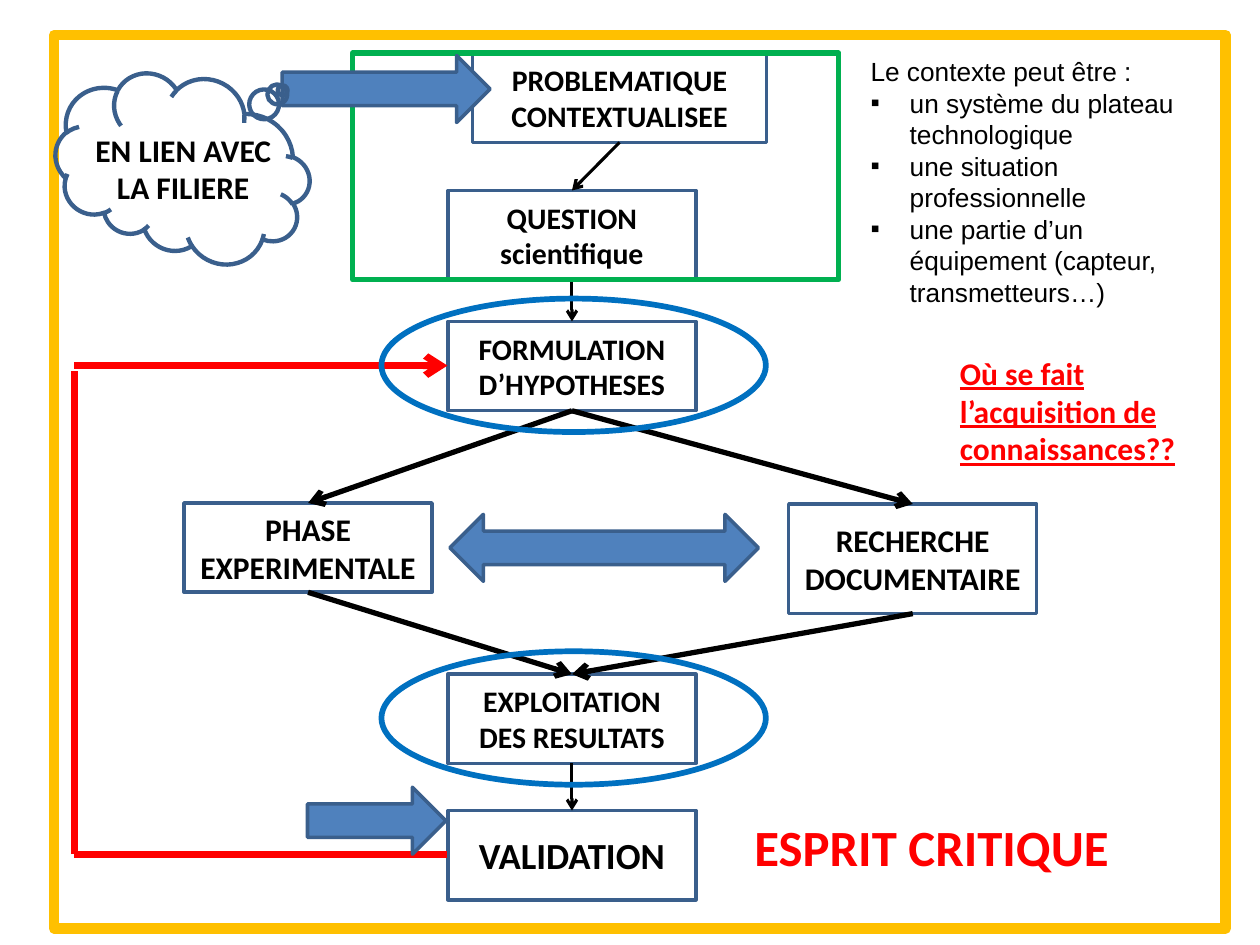
from dataclasses import dataclass

from lxml.etree import SubElement
from pptx import Presentation
from pptx.dml.color import RGBColor
from pptx.enum.shapes import MSO_CONNECTOR, MSO_SHAPE
from pptx.enum.text import MSO_ANCHOR, PP_ALIGN
from pptx.oxml.ns import qn
from pptx.util import Cm, Pt


@dataclass(frozen=True)
class Theme:
    """Colours, fonts and type sizes of the slide."""
    black: str = "000000"
    white: str = "FFFFFF"
    red: str = "FF0000"
    gold: str = "FFC000"
    green: str = "00B050"
    ring: str = "0070C0"
    blue: str = "4F81BD"
    outline: str = "3A5F8C"
    heading_font: str = "Calibri"
    body_font: str = "Arial"
    body: int = 15
    step: int = 17
    label: int = 18
    result: int = 21
    slogan: int = 29


THEME = Theme()


def write_text(shape, lines, size=THEME.label, font=THEME.heading_font, color=THEME.black,
               bold=True, underline=False, align=PP_ALIGN.LEFT, anchor=MSO_ANCHOR.TOP, bullets_from=None):
    """Write one paragraph per line, with bullets from the given index on."""
    frame = shape.text_frame
    frame.word_wrap = True
    frame.vertical_anchor = anchor
    for index, line in enumerate(lines):
        paragraph = frame.paragraphs[0] if index == 0 else frame.add_paragraph()
        paragraph.alignment = align
        run = paragraph.add_run()
        run.text = line
        run.font.size = Pt(size)
        run.font.name = font
        run.font.bold = bold
        run.font.underline = underline
        run.font.color.rgb = RGBColor.from_string(color)
        if bullets_from is not None and index >= bullets_from:
            properties = paragraph._p.get_or_add_pPr()
            properties.set("marL", str(Cm(0.79)))
            properties.set("indent", str(-Cm(0.79)))
            SubElement(properties, qn("a:buFont"), typeface=font)
            SubElement(properties, qn("a:buChar"), char="▪")


def add_text(slide, box, lines, **text_format):
    """Add a text box in the given box."""
    shape = slide.shapes.add_textbox(*map(Cm, box))
    write_text(shape, lines, **text_format)


def add_figure(slide, kind, box, line=THEME.outline, width=2, fill=None):
    """Add an outlined preset shape, hollow unless a fill is given."""
    shape = slide.shapes.add_shape(kind, *map(Cm, box))
    shape.shadow.inherit = False
    shape.line.color.rgb = RGBColor.from_string(line)
    shape.line.width = Pt(width)
    if fill:
        shape.fill.solid()
        shape.fill.fore_color.rgb = RGBColor.from_string(fill)
    else:
        shape.fill.background()
    return shape


def add_line(slide, start=(0, 0), end=(0, 0), color=THEME.black, width=1.75, arrow=True):
    """Add a straight connector, with an open arrowhead if asked."""
    connector = slide.shapes.add_connector(MSO_CONNECTOR.STRAIGHT, *map(Cm, (*start, *end)))
    connector.line.color.rgb = RGBColor.from_string(color)
    connector.line.width = Pt(width)
    if arrow:
        SubElement(connector.line._get_or_add_ln(), qn("a:tailEnd"), type="arrow")
    SubElement(connector._element.spPr, qn("a:effectLst"))
    return connector


def draw_steps(slide, box):
    """Draw the steps of the inquiry and the arrows between them."""
    left, top, width, height = box
    step_width, step_height = 5, 1.8
    middle, right = 5.32, width - step_width
    steps = {
        "problem": (["PROBLEMATIQUE", "CONTEXTUALISEE"], 5.82, 0, 5.92, step_height, THEME.step),
        "question": (["QUESTION", "scientifique"], middle, 2.77, step_width, step_height, THEME.step),
        "hypotheses": (["FORMULATION D’HYPOTHESES"], middle, 5.41, step_width, step_height, THEME.step),
        "experiment": (["PHASE EXPERIMENTALE"], 0, 9.07, step_width, step_height, THEME.label),
        "research": (["RECHERCHE DOCUMENTAIRE"], right, 9.09, step_width, 2.21, THEME.label),
        "results": (["EXPLOITATION DES RESULTATS"], middle, 12.52, step_width, step_height, THEME.step),
        "validation": (["VALIDATION"], middle, height - step_height, step_width, step_height, THEME.result),
    }
    shapes = {}
    for name, (lines, x, y, shape_width, shape_height, size) in steps.items():
        shapes[name] = add_figure(slide, MSO_SHAPE.RECTANGLE, (left + x, top + y, shape_width, shape_height),
                                  fill=THEME.white)
        write_text(shapes[name], lines, size=size, align=PP_ALIGN.CENTER, anchor=MSO_ANCHOR.MIDDLE)
    links = [
        ("problem", "question", 1.75), ("question", "hypotheses", 1.75),
        ("hypotheses", "experiment", 3), ("hypotheses", "research", 3),
        ("experiment", "results", 3), ("research", "results", 3), ("results", "validation", 1.75),
    ]
    for source, target, line_width in links:
        connector = add_line(slide, width=line_width)
        connector.begin_connect(shapes[source], 2)
        connector.end_connect(shapes[target], 0)


def draw_feedback(slide, box):
    """Draw the red loop from validation back to the hypotheses."""
    left, top, width, height = box
    right, bottom = left + width, top + height
    add_line(slide, (right, bottom), (left, bottom), THEME.red, 4, arrow=False)
    add_line(slide, (left, bottom), (left, top + 0.1), THEME.red, 4, arrow=False)
    add_line(slide, (left, top), (right, top), THEME.red, 4)


def draw_outlines(slide, box):
    """Draw the gold frame, the green frame and the two blue rings."""
    left, top, width, height = box
    add_figure(slide, MSO_SHAPE.RECTANGLE, box, THEME.gold, 6)
    add_figure(slide, MSO_SHAPE.RECTANGLE, (left + 6.02, top + 0.36, 9.8, 4.57), THEME.green, 3)
    for y in (5.31, 12.42):
        add_figure(slide, MSO_SHAPE.OVAL, (left + 6.6, top + y, 7.75, 2.69), THEME.ring, 3.25)


def draw_block_arrows(slide, box):
    """Draw the three thick blue arrows."""
    left, top, width, height = box
    arrow_height = 1.35
    for kind, x, y, arrow_width in (
        (MSO_SHAPE.LEFT_RIGHT_ARROW, width - 6.22, 9.25, 6.22),
        (MSO_SHAPE.RIGHT_ARROW, 0, 0, 4.19),
        (MSO_SHAPE.RIGHT_ARROW, 0.51, height - arrow_height, 2.79),
    ):
        add_figure(slide, kind, (left + x, top + y, arrow_width, arrow_height), fill=THEME.blue)


def draw_cloud(slide, box):
    """Draw the turned thought cloud around its upright label."""
    left, top, width, height = box
    add_text(slide, (left + 0.28, top + 0.99, 4.55, 1.83), ["EN LIEN AVEC LA FILIERE"], align=PP_ALIGN.CENTER)
    cloud = add_figure(slide, MSO_SHAPE.CLOUD_CALLOUT, box, width=2.5)
    cloud.rotation = 207.6


def draw_remarks(slide, box):
    """Write the context list, the question and the slogan on the right."""
    left, top, width, height = box
    context = [
        "Le contexte peut être :",
        "un système du plateau technologique",
        "une situation professionnelle",
        "une partie d’un équipement (capteur, transmetteurs…)",
    ]
    add_text(slide, (left + 2.34, top, 7.19, 6.68), context, size=THEME.body, font=THEME.body_font,
             bold=False, bullets_from=1)
    add_text(slide, (left + 4.14, top + 6.02, 4.9, 2.54), ["Où se fait l’acquisition de connaissances??"],
             color=THEME.red, underline=True)
    add_text(slide, (left, top + height - 1.5, 9.14, 1.5), ["ESPRIT CRITIQUE"],
             size=THEME.slogan, color=THEME.red)


def main():
    """Build the slide and save it."""
    presentation = Presentation()
    presentation.slide_width, presentation.slide_height = Cm(25.4), Cm(19.05)
    slide = presentation.slides.add_slide(presentation.slide_layouts[6])
    draw_steps(slide, (3.71, 1.07, 17.19, 17.07))
    draw_feedback(slide, (1.5, 7.37, 7.52, 9.85))
    draw_outlines(slide, (1.09, 0.71, 23.62, 18.01))
    draw_block_arrows(slide, (5.69, 1.12, 9.6, 16.1))
    draw_cloud(slide, (1.14, 1.52, 5.13, 3.61))
    draw_remarks(slide, (14.96, 0.99, 9.53, 16.84))
    presentation.save("out.pptx")


if __name__ == "__main__":
    main()
